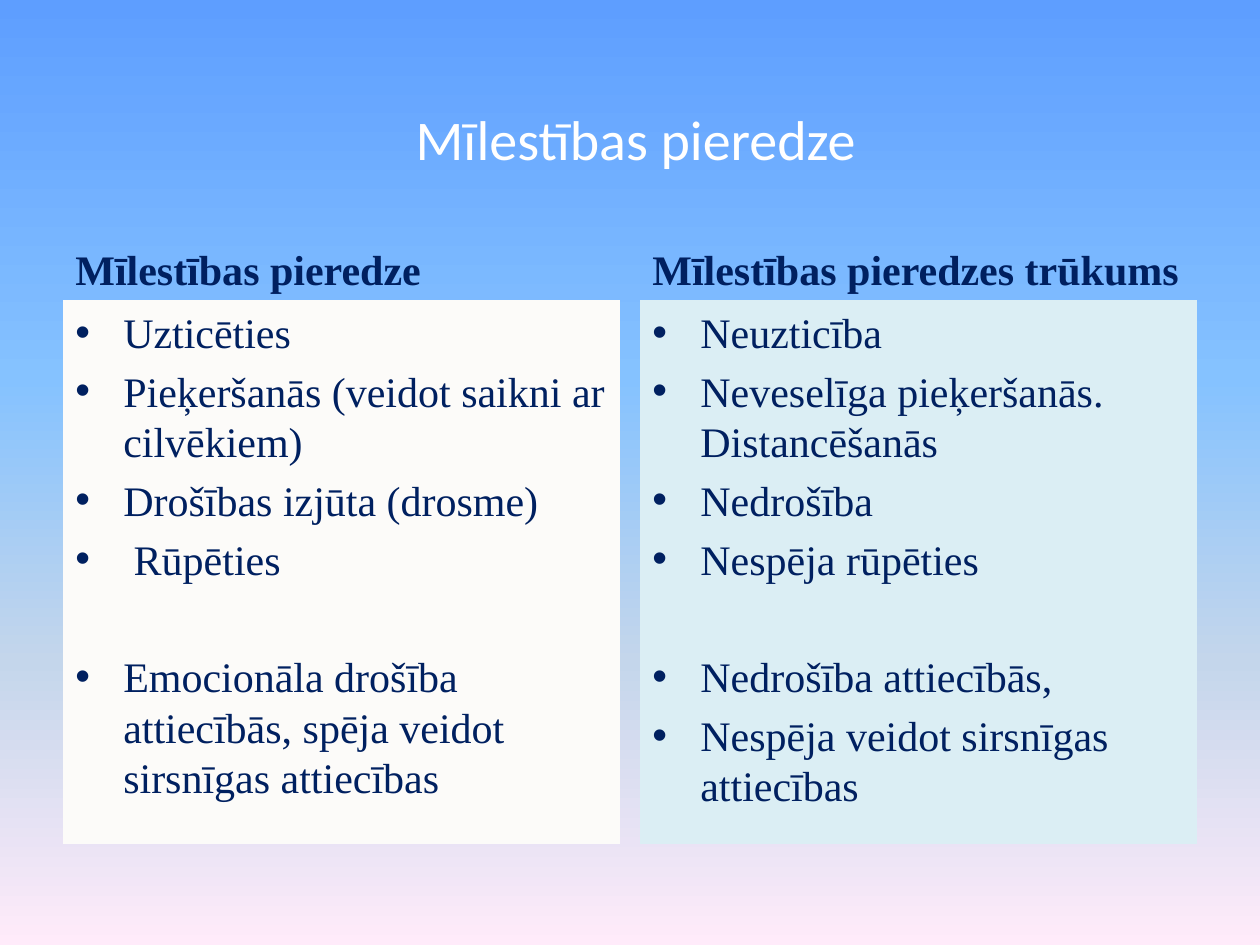
from copy import deepcopy

from lxml import etree
from pptx import Presentation
from pptx.dml.color import RGBColor
from pptx.enum.shapes import MSO_SHAPE
from pptx.enum.text import MSO_ANCHOR, PP_ALIGN
from pptx.oxml.ns import qn
from pptx.util import Inches, Pt

RECT = MSO_SHAPE.RECTANGLE
TOP, BOTTOM = MSO_ANCHOR.TOP, MSO_ANCHOR.BOTTOM
LEFT = PP_ALIGN.LEFT

WIDTH, HEIGHT = Inches(10), Inches(7.5)
NAVY, WHITE = "002060", "FFFFFF"
SERIF, SANS = "Times New Roman", "Calibri"
SKY = [(0, "5E9EFF"), (0.4, "85C2FF"), (0.7, "C4D6EB"), (1, "FFEBFA")]
MARGIN, COLUMN_WIDTH = 0.05, 0.442
COLUMN_TOP, COLUMN_HEIGHT, HEADING_SHARE = 0.224, 0.669, 0.14
INDENT = Inches(0.38)
ITEM_GAP, GROUP_GAP = 4.8, 38.4

COLUMNS = [
    ("Mīlestības pieredze", "FCFBF9", [
        ["Uzticēties", "Pieķeršanās (veidot saikni ar cilvēkiem)",
         "Drošības izjūta (drosme)", " Rūpēties"],
        ["Emocionāla drošība attiecībās, spēja veidot sirsnīgas attiecības"],
    ]),
    ("Mīlestības pieredzes trūkums", "DBEEF4", [
        ["Neuzticība", "Neveselīga pieķeršanās. Distancēšanās",
         "Nedrošība", "Nespēja rūpēties"],
        ["Nedrošība attiecībās,", "Nespēja veidot sirsnīgas attiecības"],
    ]),
]


def color(value):
    """Turn a hex string into a colour."""
    return RGBColor.from_string(value)


def place(box):
    """Turn shares of the slide into left, top, width and height."""
    left, top, width, height = box
    return (round(left * WIDTH), round(top * HEIGHT),
            round(width * WIDTH), round(height * HEIGHT))


def write(para, text, size=24, font=SERIF, ink=NAVY, bold=False, before=0, bullet=False):
    """Write one formatted paragraph."""
    para.alignment = LEFT
    para.space_before = Pt(before)
    span = para.add_run()
    span.text = text
    span.font.size = Pt(size)
    span.font.name = font
    span.font.bold = bold
    span.font.color.rgb = color(ink)
    if bullet:
        props = para._p.get_or_add_pPr()
        props.set("marL", str(INDENT))
        props.set("indent", str(-INDENT))
        etree.SubElement(props, qn("a:buFont"), typeface="Arial")
        etree.SubElement(props, qn("a:buChar"), char="•")


def paint_background(page, stops):
    """Fill the page with a top-to-bottom gradient."""
    fill = page.background.fill
    fill.gradient()
    fill.gradient_angle = 270
    stop_list = page.element.find(".//" + qn("a:gsLst"))
    while len(stop_list) < len(stops):
        stop_list.append(deepcopy(stop_list[0]))
    for stop, (position, value) in zip(fill.gradient_stops, stops):
        stop.position = position
        stop.color.rgb = color(value)


def add_title(page, box, text):
    """Place the slide title."""
    frame = page.shapes.add_textbox(*place(box)).text_frame
    frame.word_wrap = False
    write(frame.paragraphs[0], text, size=32, font=SANS, ink=WHITE)


def add_column(page, box, heading, fill, groups):
    """Place a heading over a filled panel of bulleted groups."""
    left, top, width, height = box
    split = height * HEADING_SHARE
    frame = page.shapes.add_textbox(*place((left, top, width, split))).text_frame
    frame.word_wrap = True
    frame.vertical_anchor = BOTTOM
    write(frame.paragraphs[0], heading, bold=True, before=ITEM_GAP)

    panel = page.shapes.add_shape(RECT, *place((left, top + split, width, height - split)))
    panel.shadow.inherit = False
    panel.fill.solid()
    panel.fill.fore_color.rgb = color(fill)
    panel.line.fill.background()
    frame = panel.text_frame
    frame.word_wrap = True
    frame.vertical_anchor = TOP
    for group_index, group in enumerate(groups):
        for index, item in enumerate(group):
            first = group_index == index == 0
            para = frame.paragraphs[0] if first else frame.add_paragraph()
            gap = GROUP_GAP if group_index and not index else ITEM_GAP
            write(para, item, before=gap, bullet=True)


def main():
    """Build the deck and save it."""
    deck = Presentation()
    deck.slide_width, deck.slide_height = WIDTH, HEIGHT
    page = deck.slides.add_slide(deck.slide_layouts[6])
    paint_background(page, SKY)
    step = 1 - 2 * MARGIN - COLUMN_WIDTH
    for index, column in enumerate(COLUMNS):
        box = (MARGIN + index * step, COLUMN_TOP, COLUMN_WIDTH, COLUMN_HEIGHT)
        add_column(page, box, *column)
    add_title(page, (0.32, 0.104, 0.384, 0.085), "Mīlestības pieredze")
    deck.save("out.pptx")


if __name__ == "__main__":
    main()
